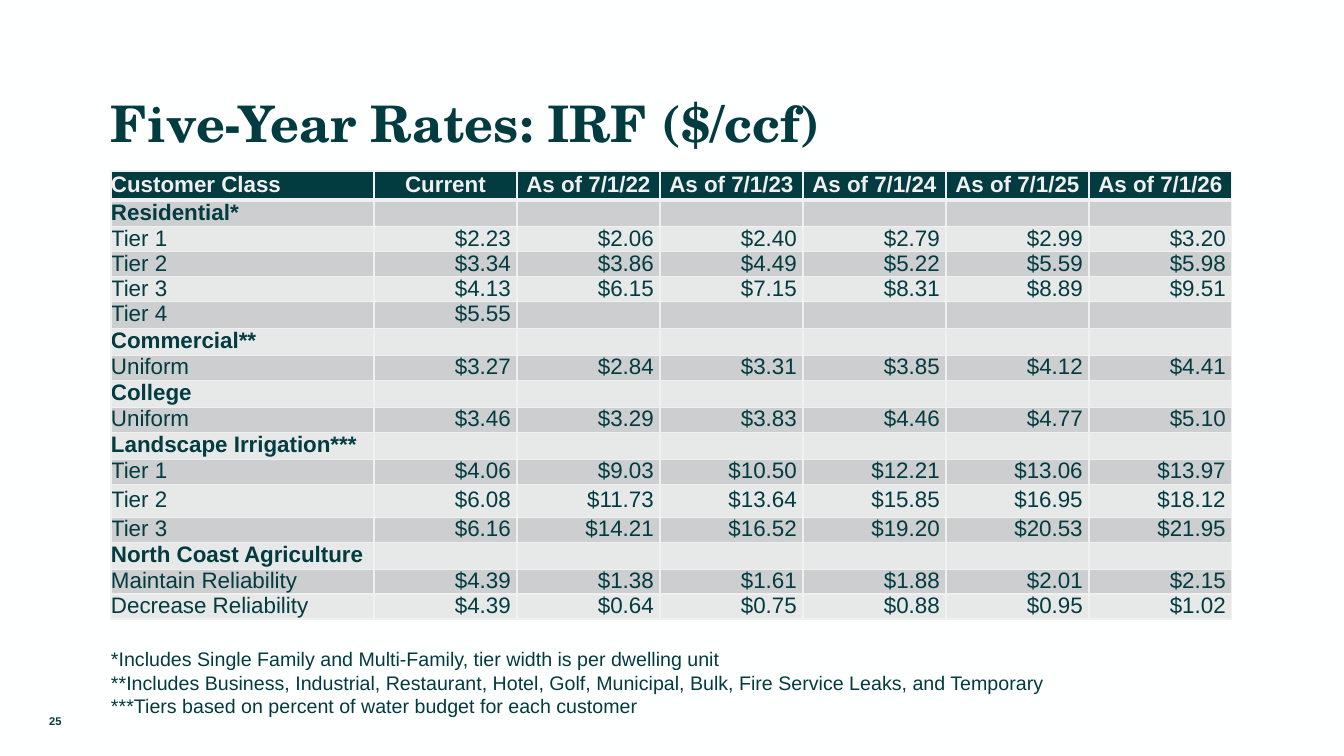
from lxml import etree
from pptx import Presentation
from pptx import util as u
from pptx.dml.color import RGBColor
from pptx.enum import text
from pptx.oxml import ns

PAPER = RGBColor(0xFE, 0xFF, 0xFF)
TEAL = RGBColor(0x02, 0x3B, 0x40)
PALE = RGBColor(0xF0, 0xF0, 0xF0)
DARK = RGBColor(0xCC, 0xCE, 0xCF)
LIGHT = RGBColor(0xE7, 0xE8, 0xE8)
LEFT, MID, RIGHT, EVEN = (
    text.PP_ALIGN.LEFT, text.PP_ALIGN.CENTER, text.PP_ALIGN.RIGHT, text.PP_ALIGN.JUSTIFY)
TOP, CENTRE, BASE = text.MSO_ANCHOR.TOP, text.MSO_ANCHOR.MIDDLE, text.MSO_ANCHOR.BOTTOM

HEAD = ["Customer Class", "Current"] + [f"As of 7/1/{year}" for year in range(22, 27)]
RATES = [
    ("Residential*",),
    ("Tier 1", "2.23", "2.06", "2.40", "2.79", "2.99", "3.20"),
    ("Tier 2", "3.34", "3.86", "4.49", "5.22", "5.59", "5.98"),
    ("Tier 3", "4.13", "6.15", "7.15", "8.31", "8.89", "9.51"),
    ("Tier 4", "5.55"),
    ("Commercial**",),
    ("Uniform", "3.27", "2.84", "3.31", "3.85", "4.12", "4.41"),
    ("College",),
    ("Uniform", "3.46", "3.29", "3.83", "4.46", "4.77", "5.10"),
    ("Landscape Irrigation***",),
    ("Tier 1", "4.06", "9.03", "10.50", "12.21", "13.06", "13.97"),
    ("Tier 2", "6.08", "11.73", "13.64", "15.85", "16.95", "18.12"),
    ("Tier 3", "6.16", "14.21", "16.52", "19.20", "20.53", "21.95"),
    ("North Coast Agriculture",),
    ("Maintain Reliability", "4.39", "1.38", "1.61", "1.88", "2.01", "2.15"),
    ("Decrease Reliability", "4.39", "0.64", "0.75", "0.88", "0.95", "1.02"),
]
TALL = 12
NOTES = [
    "*Includes Single Family and Multi-Family, tier width is per dwelling unit",
    "**Includes Business, Industrial, Restaurant, Hotel, Golf, Municipal, Bulk, "
    "Fire Service Leaks, and Temporary",
    "***Tiers based on percent of water budget for each customer",
]


def px(size):
    return u.Emu(round(size * 914400 / 100.8))


def write(frame, lines, size=16, font="Arial", color=TEAL, bold=False, align=LEFT, pitch=1.0):
    for i, line in enumerate(lines):
        para = frame.add_paragraph() if i else frame.paragraphs[0]
        para.alignment = align
        para.line_spacing = pitch
        if not line:
            end = etree.SubElement(para._p, ns.qn("a:endParaRPr"), sz=str(size * 100))
            etree.SubElement(end, ns.qn("a:latin"), typeface=font)
            continue
        run = para.add_run()
        run.text = line
        run.font.size = u.Pt(size)
        run.font.name = font
        run.font.bold = bold
        run.font.color.rgb = color


class Deck:
    def __init__(self):
        self.file = Presentation()
        self.file.slide_width, self.file.slide_height = px(1344), px(756)
        self.slide = self.file.slides.add_slide(self.file.slide_layouts[6])
        fill = self.slide.background.fill
        fill.solid()
        fill.fore_color.rgb = PAPER

    def label(self, box, lines, inset=(0, 0, 0, 0), anchor=TOP, **style):
        frame = self.slide.shapes.add_textbox(*map(px, box)).text_frame
        frame.word_wrap = True
        frame.vertical_anchor = anchor
        (frame.margin_left, frame.margin_top,
         frame.margin_right, frame.margin_bottom) = map(px, inset)
        write(frame, lines, **style)

    def edge(self, cell, base):
        props = cell._tc.get_or_add_tcPr()
        for side, width in zip("LRTB", (1, 1, 1, base)):
            line = etree.SubElement(props, ns.qn(f"a:ln{side}"), w=str(u.Pt(width)))
            fill = etree.SubElement(line, ns.qn("a:solidFill"))
            etree.SubElement(fill, ns.qn("a:srgbClr"), val=str(PALE))

    def cell(self, cell, line, fill, base=1, **style):
        self.edge(cell, base)
        cell.fill.solid()
        cell.fill.fore_color.rgb = fill
        cell.margin_left = cell.margin_top = cell.margin_right = cell.margin_bottom = 0
        cell.vertical_anchor = CENTRE
        write(cell.text_frame, [line], pitch=0.9, **style)

    def table(self, left, top, widths, heights):
        grid = self.slide.shapes.add_table(
            len(heights), len(widths), px(left), px(top),
            px(sum(widths)), px(sum(heights))).table
        grid.first_row = grid.horz_banding = False
        for col, width in zip(grid.columns, widths):
            col.width = px(width)
        for row, height in zip(grid.rows, heights):
            row.height = px(height)
        return grid

    def rates(self):
        heights = [29] + [33 if i == TALL else 25 for i in range(1, len(RATES) + 1)]
        grid = self.table(111, 171, [263] + [143] * 6, heights)
        for c, name in enumerate(HEAD):
            self.cell(grid.cell(0, c), name, TEAL, base=3, color=PALE, bold=True,
                      align=MID if c else LEFT)
        for r, (name, *costs) in enumerate(RATES, 1):
            fill = DARK if r % 2 else LIGHT
            self.cell(grid.cell(r, 0), name, fill, bold=not costs)
            for c in range(1, len(HEAD)):
                cost = f"${costs[c - 1]} " if c <= len(costs) else ""
                self.cell(grid.cell(r, c), cost, fill, align=RIGHT)


def main():
    deck = Deck()
    deck.label((111, 65, 1122, 88), ["Five-Year Rates: IRF ($/ccf)"], inset=(0, 21, 0, 0),
               anchor=BASE, size=36, font="TeX Gyre Schola", bold=True)
    deck.rates()
    deck.label((0, 701, 111, 40), ["25"], inset=(10, 5, 10, 5), anchor=CENTRE,
               size=8, bold=True, align=MID)
    deck.label((111, 643, 1024, 80), NOTES, inset=(0, 4, 24, 4), size=14, align=EVEN)
    deck.file.save("out.pptx")


if __name__ == "__main__":
    main()
